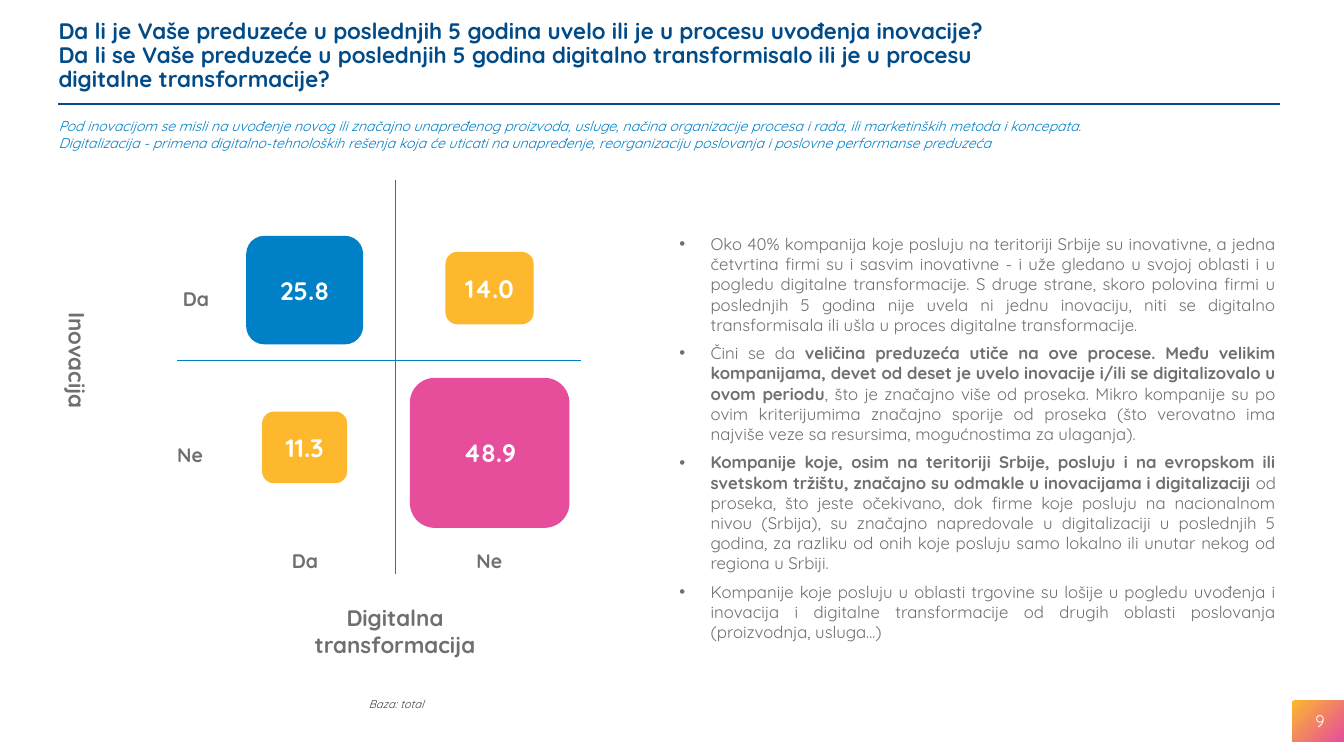
from pptx import Presentation, util as u
from pptx.dml.color import RGBColor
from pptx.enum import shapes, text
from pptx.oxml.ns import qn
from lxml import etree

NAVY, BLUE, PINK, YELLOW = "004B88", "0080C6", "E64E9C", "FDB82E"
GREY, DARK, WHITE = "6E706E", "404040", "FFFFFF"
LEFT, CENTER = text.PP_ALIGN.LEFT, text.PP_ALIGN.CENTER
RIGHT, JUSTIFY = text.PP_ALIGN.RIGHT, text.PP_ALIGN.JUSTIFY
TOP, MIDDLE = text.MSO_ANCHOR.TOP, text.MSO_ANCHOR.MIDDLE


def color(value):
    return RGBColor.from_string(value)


def write(shape, *lines, size, fill=GREY, bold=False, italic=False, align=LEFT,
          anchor=MIDDLE, side=(7.2, 7.2), spacing=1, after=0, hanging=None):
    """Fill a shape with one paragraph per line; **marks** enclose bold spans."""
    frame = shape.text_frame
    frame.word_wrap = True
    frame.auto_size = text.MSO_AUTO_SIZE.NONE
    frame.vertical_anchor = anchor
    frame.margin_left, frame.margin_right = map(u.Pt, side)
    frame.margin_top = frame.margin_bottom = u.Pt(3.6)
    for number, line in enumerate(lines):
        para = frame.add_paragraph() if number else frame.paragraphs[0]
        para.alignment = align
        para.line_spacing = spacing
        para.space_before, para.space_after = u.Pt(0), u.Pt(after)
        if hanging:
            properties = para._p.get_or_add_pPr()
            properties.set("marL", str(u.Pt(hanging[0])))
            properties.set("indent", str(u.Pt(hanging[1])))
        for part, words in enumerate(line.split("**")):
            if words:
                span = para.add_run()
                span.text = words
                span.font.name, span.font.size = "Quicksand", u.Pt(size)
                span.font.bold = bold or part % 2 == 1
                span.font.italic = italic
                span.font.color.rgb = color(fill)


deck = Presentation()
deck.slide_width, deck.slide_height = u.Pt(960), u.Pt(540)
page = deck.slides.add_slide(deck.slide_layouts[1])
title, body = page.placeholders

# Title and bulleted findings
title.left, title.top, title.width, title.height = map(u.Pt, (41.8, 11.5, 884, 57))
write(title,
      "Da li je Vaše preduzeće u poslednjih 5 godina uvelo ili je u procesu uvođenja inovacije?",
      "Da li se Vaše preduzeće u poslednjih 5 godina digitalno transformisalo ili je u procesu",
      "digitalne transformacije?",
      size=16, fill=NAVY, bold=True, side=(0, 7.2), spacing=0.9)

body.left, body.top, body.width, body.height = map(u.Pt, (449.3, 163.4, 462.2, 322.6))
write(body,
      "Oko 40% kompanija koje posluju na teritoriji Srbije su inovativne, a jedna četvrtina firmi "
      "su i sasvim inovativne - i uže gledano u svojoj oblasti i u pogledu digitalne "
      "transformacije. S druge strane, skoro polovina firmi u poslednjih 5 godina nije uvela ni "
      "jednu inovaciju, niti se digitalno transformisala ili ušla u proces digitalne "
      "transformacije.",
      "Čini se da **veličina preduzeća utiče na ove procese. Među velikim kompanijama, devet od "
      "deset je uvelo inovacije i/ili se digitalizovalo u ovom periodu**, što je značajno više "
      "od proseka. Mikro kompanije su po ovim kriterijumima značajno sporije od proseka (što "
      "verovatno ima najviše veze sa resursima, mogućnostima za ulaganja).",
      "**Kompanije koje, osim na teritoriji Srbije, posluju i na evropskom ili svetskom tržištu, "
      "značajno su odmakle u inovacijama i digitalizaciji **od proseka, što jeste očekivano, dok "
      "firme koje posluju na nacionalnom nivou (Srbija), su značajno napredovale u "
      "digitalizaciji u poslednjih 5 godina, za razliku od onih koje posluju samo lokalno ili "
      "unutar nekog od regiona u Srbiji.",
      "Kompanije koje posluju u oblasti trgovine su lošije u pogledu uvođenja i inovacija i "
      "digitalne transformacije od drugih oblasti poslovanja (proizvodnja, usluga...)",
      size=12, align=JUSTIFY, anchor=TOP, side=(0, 0), after=6, hanging=(58.3, -22.3))

# Title rule and the two axes of the matrix
for x1, y1, x2, y2, hue, weight in (
        (41.8, 74.2, 914.4, 74.2, NAVY, 1.5),
        (282.4, 128.4, 282.4, 410.2, BLUE, 0.5),
        (126.7, 257.6, 414.7, 257.6, BLUE, 0.5)):
    line = page.shapes.add_connector(shapes.MSO_CONNECTOR.STRAIGHT, *map(u.Pt, (x1, y1, x2, y2)))
    line.line.color.rgb = color(hue)
    line.line.width = u.Pt(weight)
    etree.SubElement(line._element.spPr, qn("a:effectLst"))

# Matrix values, each tile sized by its share
for value, hue, *place in (
        ("25.8", BLUE, 175.9, 168.5, 83.5, 77.5),
        ("14.0", YELLOW, 318.2, 179.9, 63, 51.8),
        ("11.3", YELLOW, 187.2, 294, 60.8, 51.2),
        ("48.9", PINK, 292.8, 269.9, 114, 107.2)):
    tile = page.shapes.add_shape(shapes.MSO_SHAPE.ROUNDED_RECTANGLE, *map(u.Pt, place))
    tile.shadow.inherit = False
    tile.fill.solid()
    tile.fill.fore_color.rgb = color(hue)
    tile.line.fill.background()
    write(tile, value, size=18, fill=WHITE, bold=True, align=CENTER)

corner = page.shapes.add_shape(shapes.MSO_SHAPE.RECTANGLE, *map(u.Pt, (923, 500.4, 37, 29)))
corner.shadow.inherit = False
corner.line.fill.background()
corner.fill.gradient()
corner.fill.gradient_angle = 315
for stop, hue in zip(corner.fill.gradient_stops, (YELLOW, PINK)):
    stop.color.rgb = color(hue)

# Labels and notes
label = dict(size=14, bold=True, align=CENTER)
axis = dict(size=16, bold=True, align=CENTER)
for place, turn, lines, style in (
        ((123.5, 197.6, 34, 32), 0, ["Da"], label | dict(align=LEFT)),
        ((119.5, 308.7, 42, 32), 0, ["Ne"], label | dict(align=LEFT)),
        ((185.8, 388, 64, 24.5), 0, ["Da"], label),
        ((316, 388, 67, 24.5), 0, ["Ne"], label),
        ((-38.2, 244, 187.2, 26.6), 90, ["Inovacija"], axis),
        ((193.7, 424, 177, 53.3), 0, ["Digitalna transformacija"], axis),
        ((41.8, 80.6, 869.8, 31.7), 0,
         ["Pod inovacijom se misli na uvođenje novog ili značajno unapređenog proizvoda, usluge, "
          "načina organizacije procesa i rada, ili marketinških metoda i koncepata.",
          "Digitalizacija - primena digitalno-tehnoloških rešenja koja će uticati na unapređenje, "
          "reorganizaciju poslovanja i poslovne performanse preduzeća"],
         dict(size=10, fill=BLUE, italic=True, anchor=TOP, side=(0, 7.2))),
        ((247.7, 494.6, 70.6, 17.3), 0, ["Baza: total"],
         dict(size=8, fill=DARK, italic=True, align=CENTER, anchor=TOP, side=(0, 0))),
        ((737.3, 500.4, 216, 29), 0, ["9"], dict(size=12, fill=WHITE, align=RIGHT))):
    box = page.shapes.add_textbox(*map(u.Pt, place))
    box.rotation = turn
    write(box, *lines, **style)

deck.save("out.pptx")
